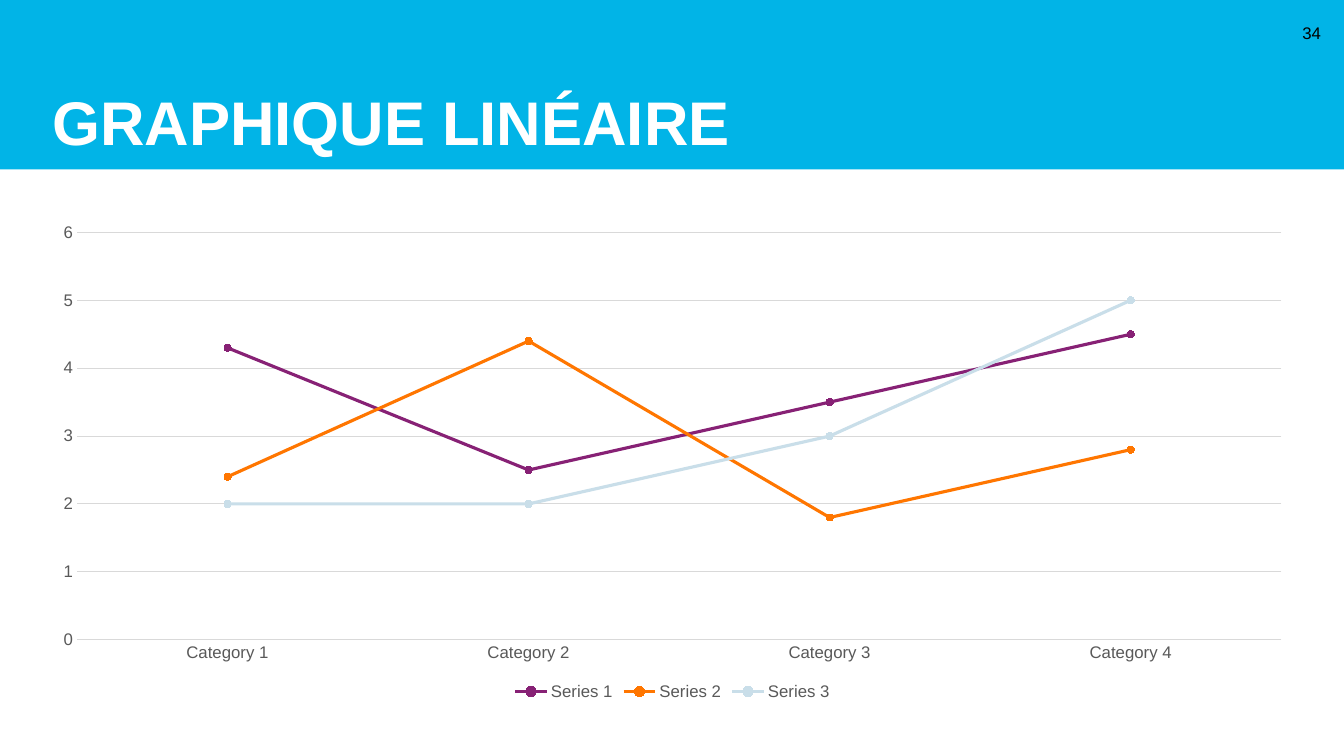
from dataclasses import dataclass

from pptx import Presentation
from pptx.chart import data as chart_data
from pptx.dml import color
from pptx.enum import chart as charts, shapes, text
from pptx.util import Inches, Pt


@dataclass(frozen=True)
class Theme:
    font: str = "Arial"
    band: str = "01B4E7"
    title: str = "FFFFFF"
    number: str = "000000"
    label: str = "595959"
    grid: str = "D9D9D9"
    series: tuple = ("872175", "FF7600", "C9DEE9")
    title_size: int = 44
    text_size: int = 12
    grid_width: float = 0.75
    series_width: float = 2.25
    marker_size: int = 5


THEME = Theme()
CATEGORIES = [f"Category {number}" for number in range(1, 5)]
SERIES = {
    "Series 1": (4.3, 2.5, 3.5, 4.5),
    "Series 2": (2.4, 4.4, 1.8, 2.8),
    "Series 3": (2, 2, 3, 5),
}


def apply(target, values):
    for name, value in values.items():
        setattr(target, name, value)


def inches(*lengths):
    return [Inches(length) for length in lengths]


def place(box, *lengths):
    apply(box, dict(zip(("left", "top", "width", "height"), inches(*lengths))))


def style_font(font, size, shade, bold=False):
    apply(font, {"name": THEME.font, "size": Pt(size), "bold": bold})
    font.color.rgb = color.RGBColor.from_string(shade)


def style_fill(fill, shade):
    fill.solid()
    fill.fore_color.rgb = color.RGBColor.from_string(shade)


def style_line(line, shade, width):
    style_fill(line.fill, shade)
    line.width = Pt(width)


def write(box, words, size, shade, frame_format, para_format, bold=False):
    apply(box.text_frame, frame_format)
    para = box.text_frame.paragraphs[0]
    apply(para, para_format)
    span = para.add_run()
    span.text = words
    style_font(span.font, size, shade, bold)


def add_band(page):
    band = page.shapes.add_shape(shapes.MSO_SHAPE.RECTANGLE, *inches(0, 0, 13.33, 1.68))
    style_fill(band.fill, THEME.band)
    band.line.fill.background()
    band.shadow.inherit = False
    title = page.shapes.title
    title.element.addprevious(band.element)


def add_title(page, words):
    title = page.shapes.title
    place(title, 0.42, 0, 12.58, 1.68)
    frame_format = {
        "vertical_anchor": text.MSO_ANCHOR.BOTTOM,
        "auto_size": text.MSO_AUTO_SIZE.NONE,
        "word_wrap": True,
        "margin_left": Inches(0.1),
        "margin_top": 0,
        "margin_right": Inches(0.1),
        "margin_bottom": Inches(0.1),
    }
    para_format = {"alignment": text.PP_ALIGN.LEFT, "line_spacing": 0.9}
    write(title, words, THEME.title_size, THEME.title, frame_format, para_format, bold=True)


def add_page_number(page, words):
    box = page.shapes.add_textbox(*inches(12.74, 0.13, 0.46, 0.4))
    frame_format = {"vertical_anchor": text.MSO_ANCHOR.MIDDLE, "word_wrap": True}
    para_format = {"alignment": text.PP_ALIGN.RIGHT}
    write(box, words, THEME.text_size, THEME.number, frame_format, para_format)


def style_axes(chart):
    for axis in (chart.category_axis, chart.value_axis):
        apply(axis, {
            "major_tick_mark": charts.XL_TICK_MARK.NONE,
            "minor_tick_mark": charts.XL_TICK_MARK.NONE,
        })
        style_font(axis.tick_labels.font, THEME.text_size, THEME.label)
    style_line(chart.category_axis.format.line, THEME.grid, THEME.grid_width)
    values = chart.value_axis
    apply(values, {
        "minimum_scale": 0,
        "maximum_scale": 6,
        "major_unit": 1,
        "has_major_gridlines": True,
    })
    values.format.line.fill.background()
    style_line(values.major_gridlines.format.line, THEME.grid, THEME.grid_width)


def style_series(series, shade):
    series.smooth = False
    style_line(series.format.line, shade, THEME.series_width)
    apply(series.marker, {
        "style": charts.XL_MARKER_STYLE.CIRCLE,
        "size": THEME.marker_size,
    })
    style_fill(series.marker.format.fill, shade)
    style_line(series.marker.format.line, shade, THEME.grid_width)


def add_line_chart(page):
    data = chart_data.CategoryChartData()
    data.categories = CATEGORIES
    for name, values in SERIES.items():
        data.add_series(name, values)
    frame = page.shapes.add_chart(
        charts.XL_CHART_TYPE.LINE_MARKERS, *inches(0.38, 2.12, 12.58, 4.87), data
    )
    chart = frame.chart
    apply(chart, {"has_title": False, "has_legend": True})
    style_font(chart.font, THEME.text_size, THEME.label)
    apply(chart.legend, {
        "position": charts.XL_LEGEND_POSITION.BOTTOM,
        "include_in_layout": False,
    })
    style_font(chart.legend.font, THEME.text_size, THEME.label)
    style_axes(chart)
    chart.plots[0].vary_by_categories = False
    for series, shade in zip(chart.plots[0].series, THEME.series):
        style_series(series, shade)


def main():
    deck = Presentation()
    apply(deck, {"slide_width": Inches(13.33), "slide_height": Inches(7.5)})
    page = deck.slides.add_slide(deck.slide_layouts.get_by_name("Title Only"))
    add_band(page)
    add_title(page, "GRAPHIQUE LINÉAIRE")
    add_page_number(page, "34")
    add_line_chart(page)
    deck.save("out.pptx")


if __name__ == "__main__":
    main()
